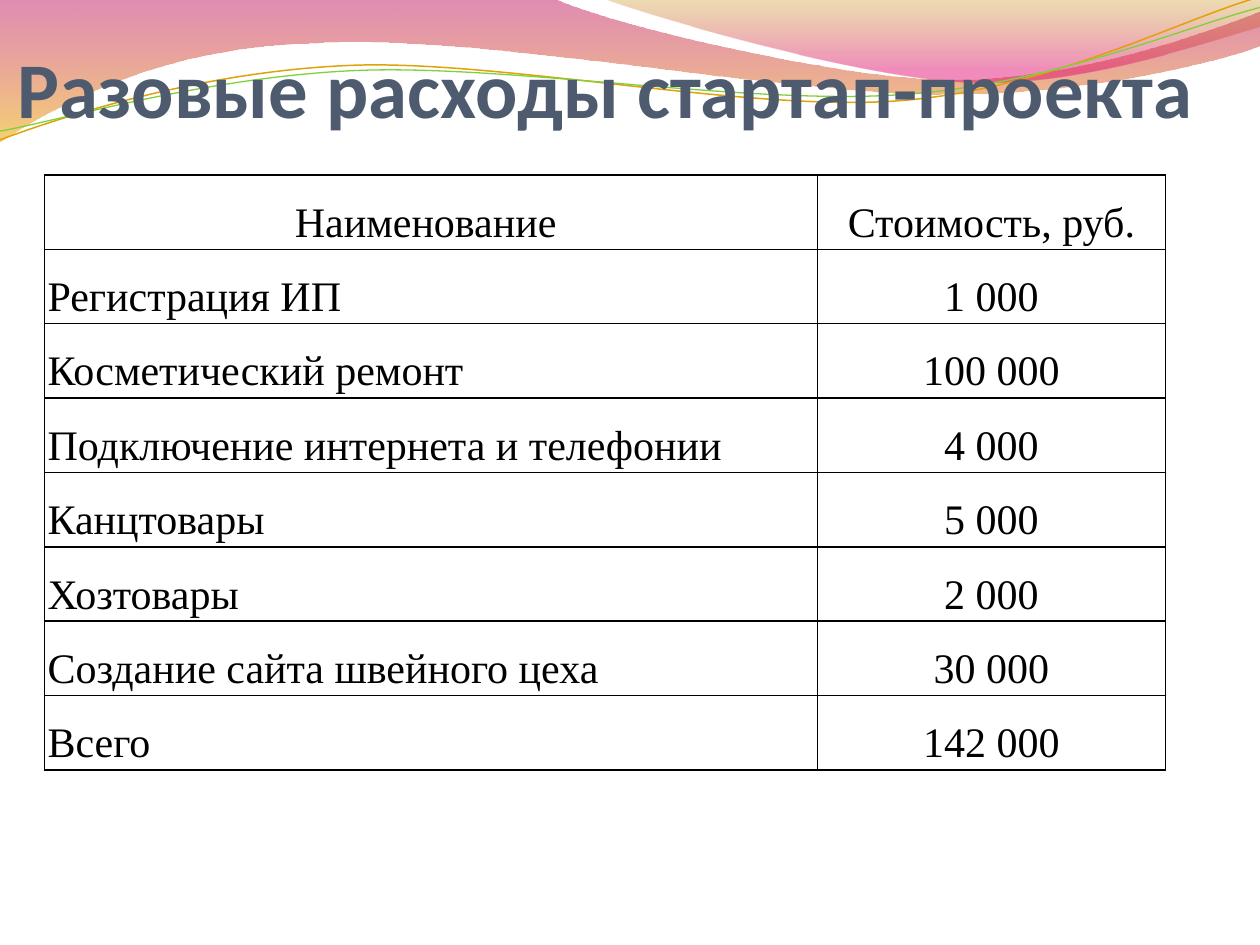
"""Build a slide with the one-off costs of a start-up project."""
import math
from dataclasses import dataclass
from typing import Optional

from lxml import etree
from pptx import Presentation
from pptx import util as u
from pptx.dml.color import RGBColor
from pptx.enum import text
from pptx.oxml import ns

COLORS = {
    "title": "4E5B6F", "ink": "000000", "magenta": "BD0059", "amber": "F0AB00",
    "ochre": "C38B00", "pink": "E1006B", "orange": "E0A209", "green": "7FD13B",
}
COSTS = [
    ("Наименование ", "Стоимость, руб."),
    ("Регистрация ИП", "1 000"),
    ("Косметический ремонт", "100 000"),
    ("Подключение интернета и телефонии", "4 000"),
    ("Канцтовары", "5 000"),
    ("Хозтовары", "2 000"),
    ("Создание сайта швейного цеха", "30 000"),
    ("Всего", "142 000"),
]
COLUMN_WIDTHS = (441.5, 199)
ROW_HEIGHT = 42.5
LINE_TILT = 357.3

Point = tuple[float, float]


@dataclass
class Stop:
    position: float
    color: str
    opacity: int


@dataclass
class Wave:
    start: Point
    segments: list[tuple[Point, ...]]
    stops: tuple[Stop, ...] = ()
    line: Optional[str] = None
    width: float = 0
    center: Point = (0, 0)
    tilt: float = 0


WAVES = [
    Wave((0, 0), [
        ((316.8, -0.7),),
        ((342.7, 12.2), (478.1, 45.4), (545.8, 45.4)),
        ((614.2, 45.4), (689.8, 18.7), (720, 6.5)),
        ((720.7, 25.9),),
        ((707.8, 31.7), (626.4, 54.7), (537.1, 54)),
        ((447.8, 54), (275, 20.2), (185, 24.5)),
        ((92.2, 25.9), (33.1, 59.8), (-0.7, 81.4)),
        ((0, 0),),
    ], stops=(Stop(0, "magenta", 45), Stop(1, "amber", 55))),
    Wave((344.9, -0.7), [
        ((366.5, 7.9), (491, 44.6), (553.7, 46.8)),
        ((616.3, 49.7), (691.9, 23), (720, 15.1)),
        ((720, 0),),
        ((344.9, -0.7),),
    ], stops=(Stop(0, "ochre", 30), Stop(0.8, "pink", 45))),
    Wave((0, 79.9), [
        ((34.6, 67), (113.8, 41), (199.4, 37.4)),
        ((284.4, 33.8), (427, 64.1), (513.4, 57.6)),
        ((599.8, 51.1), (675.4, 10.8), (718.6, -1.4)),
    ], line="orange", width=0.85, center=(359.3, 41.4), tilt=LINE_TILT),
    Wave((0, 74.9), [
        ((33.8, 69.1), (118.1, 43.9), (203.8, 40.3)),
        ((290.2, 36.7), (429.8, 60.5), (516.2, 54)),
        ((601.9, 48.2), (677.5, 15.1), (720, 4.3)),
    ], line="green", width=0.75, center=(359.6, 42.5), tilt=LINE_TILT),
]


def rgb(name: str) -> RGBColor:
    """Return the named colour."""
    return RGBColor.from_string(COLORS[name])


def untilt(wave: Wave, point: Point) -> Point:
    """Return a point in EMU as it lies before the wave is rotated."""
    angle = math.radians(-wave.tilt)
    (cx, cy), (x, y) = wave.center, point
    dx, dy = x - cx, y - cy
    return (u.Pt(cx + dx * math.cos(angle) - dy * math.sin(angle)),
            u.Pt(cy + dx * math.sin(angle) + dy * math.cos(angle)))


def bend(sp, segments: list[tuple[Point, ...]]) -> None:
    """Turn each run of three vertices into one Bezier curve."""
    vertices = iter(list(sp.element.iter(ns.qn("a:lnTo"))))
    for segment in segments:
        nodes = [next(vertices) for _ in segment]
        if len(nodes) == 3:
            curve = etree.Element(ns.qn("a:cubicBezTo"))
            nodes[0].addprevious(curve)
            for node in nodes:
                curve.append(node[0])
                node.getparent().remove(node)


def add_wave(s, wave: Wave) -> None:
    """Draw a filled band or an open line."""
    builder = s.shapes.build_freeform(*untilt(wave, wave.start))
    builder.add_line_segments(
        [untilt(wave, p) for segment in wave.segments for p in segment],
        close=bool(wave.stops))
    sp = builder.convert_to_shape()
    bend(sp, wave.segments)
    sp.rotation = wave.tilt
    sp.shadow.inherit = False
    if wave.line:
        sp.fill.background()
        sp.line.color.rgb = rgb(wave.line)
        sp.line.width = u.Pt(wave.width)
        return
    sp.line.fill.background()
    sp.fill.gradient()
    sp.fill.gradient_angle = 270
    for target, stop in zip(sp.fill.gradient_stops, wave.stops):
        target.position = stop.position
        target.color.rgb = rgb(stop.color)
    for node, stop in zip(sp.element.iter(ns.qn("a:gs")), wave.stops):
        etree.SubElement(node[0], ns.qn("a:alpha"), val=str(stop.opacity * 1000))


def format_run(p, font: str, size: float, color: str, bold: bool) -> None:
    """Format the only run of a paragraph."""
    r = p.runs[0]
    r.font.name, r.font.size, r.font.bold = font, u.Pt(size), bold
    r.font.color.rgb = rgb(color)


def add_title(s, title: str) -> None:
    """Add the slide heading."""
    tf = s.shapes.add_textbox(u.Pt(0), u.Pt(26), u.Pt(701), u.Pt(50.5)).text_frame
    tf.word_wrap = True
    tf.vertical_anchor = text.MSO_ANCHOR.BOTTOM
    tf.margin_left, tf.margin_right, tf.margin_bottom = u.Pt(10), 0, 0
    tf.text = title
    format_run(tf.paragraphs[0], "Calibri", 45, "title", True)


def add_borders(cell) -> None:
    """Give a cell a thin line on each side."""
    props = cell._tc.get_or_add_tcPr()
    for side in ("lnL", "lnR", "lnT", "lnB"):
        line = etree.SubElement(props, ns.qn(f"a:{side}"), w=str(u.Pt(1)))
        fill = etree.SubElement(line, ns.qn("a:solidFill"))
        etree.SubElement(fill, ns.qn("a:srgbClr"), val=COLORS["ink"])


def fill_cell(cell, value: str, centered: bool) -> None:
    """Write and format one table cell."""
    add_borders(cell)
    cell.fill.background()
    cell.vertical_anchor = text.MSO_ANCHOR.MIDDLE
    cell.margin_left = cell.margin_right = u.Pt(1.7)
    cell.margin_top = cell.margin_bottom = 0
    cell.text = value
    p = cell.text_frame.paragraphs[0]
    p.alignment = text.PP_ALIGN.CENTER if centered else text.PP_ALIGN.LEFT
    p.line_spacing = 1.47
    format_run(p, "Times New Roman", 24, "ink", False)


def add_costs(s) -> None:
    """Add the cost table."""
    table = s.shapes.add_table(
        len(COSTS), len(COLUMN_WIDTHS), u.Pt(25.5), u.Pt(100),
        u.Pt(sum(COLUMN_WIDTHS)), u.Pt(ROW_HEIGHT * len(COSTS))).table
    table.first_row = table.horz_banding = False
    for column, width in zip(table.columns, COLUMN_WIDTHS):
        column.width = u.Pt(width)
    for i, row in enumerate(COSTS):
        for j, value in enumerate(row):
            fill_cell(table.cell(i, j), value, centered=i == 0 or j == 1)


def main() -> None:
    """Build and save the slide."""
    prs = Presentation()
    prs.slide_width, prs.slide_height = u.Pt(720), u.Pt(540)
    s = prs.slides.add_slide(prs.slide_layouts[6])
    for wave in WAVES:
        add_wave(s, wave)
    add_title(s, "Разовые расходы стартап-проекта")
    add_costs(s)
    prs.save("out.pptx")


if __name__ == "__main__":
    main()
